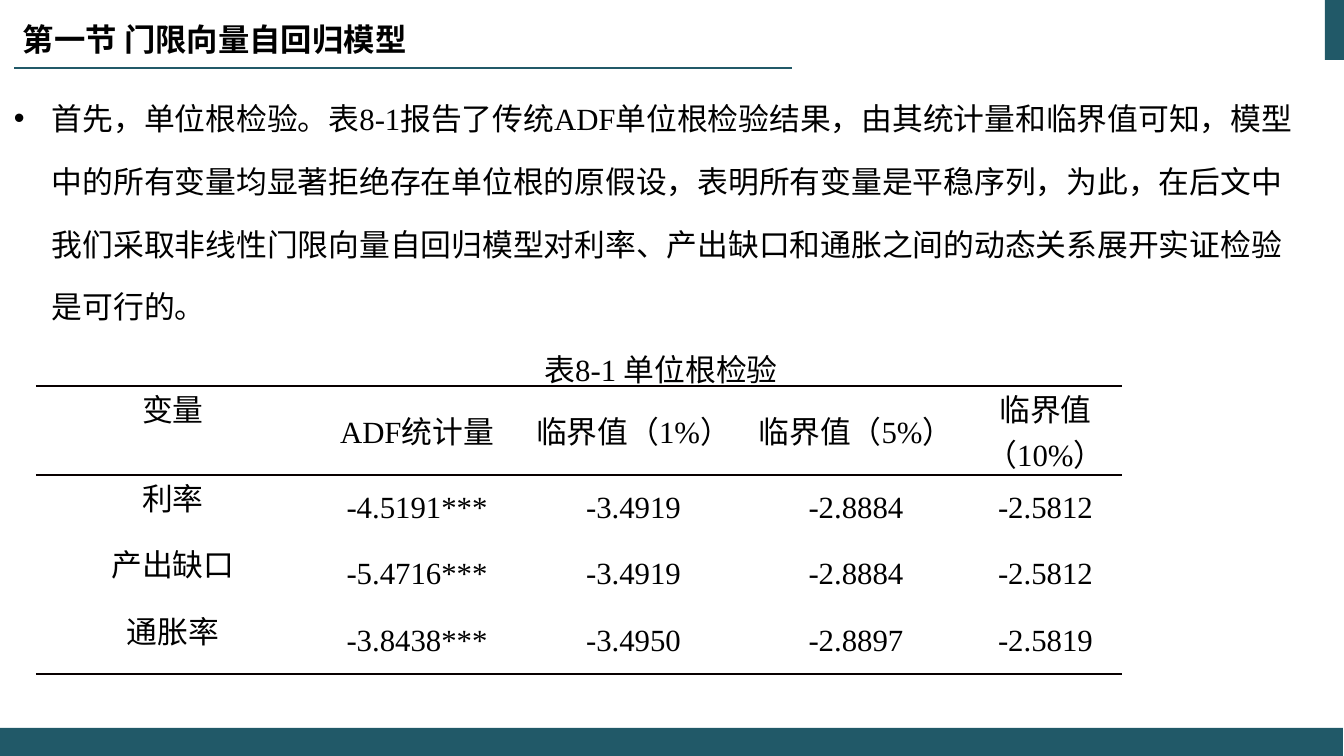
"""Build the slide on the unit root test of the threshold VAR model."""
from lxml.etree import SubElement
from pptx import Presentation
from pptx.dml.color import RGBColor
from pptx.enum.shapes import MSO_CONNECTOR as Link, MSO_SHAPE as Shape
from pptx.enum.text import MSO_ANCHOR as Anchor, PP_ALIGN as Align
from pptx.oxml.ns import qn
from pptx.util import Emu, Pt

TEAL = RGBColor(0x21, 0x59, 0x68)
BLACK = RGBColor(0, 0, 0)
RULE = RGBColor(0x08, 0, 0)
HAN = "Noto Sans CJK SC"
ROMAN = "Times New Roman"


def px(*nums):
    return [Emu(round(n * 914400 / 100.8)) for n in nums]


def style(para, face=ROMAN, size=22, bold=False):
    for run in para.runs:
        font = run.font
        font.size, font.bold = Pt(size), bold
        font.color.rgb = BLACK
        font.name = face
        SubElement(font._element, qn("a:ea"), typeface=HAN)


deck = Presentation()
deck.slide_width, deck.slide_height = px(1344, 756)
slide = deck.slides.add_slide(deck.slide_layouts[6])
shapes = slide.shapes

for box in [(1325, 0, 20, 60), (0, 728, 1343, 28)]:
    bar = shapes.add_shape(Shape.RECTANGLE, *px(*box))
    bar.shadow.inherit = False
    bar.fill.solid()
    bar.fill.fore_color.rgb = TEAL
    bar.line.fill.background()

line = shapes.add_connector(Link.STRAIGHT, *px(792, 68, 14, 68))
line.line.color.rgb = TEAL
line.line.width = Pt(1.5)
SubElement(line._element.spPr, qn("a:effectLst"))

title = shapes.add_textbox(*px(13, -8, 603, 94)).text_frame
title.word_wrap = True
title.vertical_anchor = Anchor.MIDDLE
title.text = "第一节 门限向量自回归模型"
style(title.paragraphs[0], HAN, 22.4, True)

body = shapes.add_textbox(*px(4, 69, 1314, 655)).text_frame
body.word_wrap = True
point = body.paragraphs[0]
point.text = (
    "首先，单位根检验。表8-1报告了传统ADF单位根检验结果，由其统计量和临界值可知，"
    "模型中的所有变量均显著拒绝存在单位根的原假设，表明所有变量是平稳序列，为此，"
    "在后文中我们采取非线性门限向量自回归模型对利率、产出缺口和通胀之间的动态关系"
    "展开实证检验是可行的。"
)
props = point._p.get_or_add_pPr()
indent = px(38)[0]
props.set("marL", str(indent))
props.set("indent", str(-indent))
SubElement(props, qn("a:buFont"), typeface="Arial")
SubElement(props, qn("a:buChar"), char="•")
label = body.add_paragraph()
label.text = "表8-1 单位根检验"
label.alignment = Align.CENTER
for para in body.paragraphs:
    para.line_spacing = 1.7
    style(para)

DATA = [
    ["变量", "ADF统计量", "临界值（1%）", "临界值（5%）", "临界值（10%）"],
    ["利率", "-4.5191***", "-3.4919", "-2.8884", "-2.5812"],
    ["产出缺口", "-5.4716***", "-3.4919", "-2.8884", "-2.5812"],
    ["通胀率", "-3.8438***", "-3.4950", "-2.8897", "-2.5819"],
]
EDGES = [["lnT", "lnB"], ["lnT"], [], ["lnB"]]
WIDTHS = px(274, 214, 219, 226, 153)
HEIGHTS = px(89, 66, 67, 66)

grid = shapes.add_table(4, 5, *px(36, 386, 1086, 288)).table
grid.first_row = grid.horz_banding = False
look = grid._tbl.tblPr.find(qn("a:tableStyleId"))
look.text = "{2D5ABB26-0587-4C30-8999-92F81FD0307C}"
for col, width in zip(grid.columns, WIDTHS):
    col.width = width
for row, height, words, edges in zip(grid.rows, HEIGHTS, DATA, EDGES):
    row.height = height
    for i, (cell, word) in enumerate(zip(row.cells, words)):
        cell.text = word
        cell.margin_left = cell.margin_right = px(7)[0]
        cell.margin_top = cell.margin_bottom = 0
        cell.vertical_anchor = Anchor.MIDDLE if i else Anchor.TOP
        para = cell.text_frame.paragraphs[0]
        para.alignment = Align.CENTER
        style(para)
        for edge in ["lnL", "lnR", "lnT", "lnB"]:
            rim = SubElement(cell._tc.tcPr, qn("a:" + edge), w=str(Pt(1)))
            if edge in edges:
                fill = SubElement(rim, qn("a:solidFill"))
                SubElement(fill, qn("a:srgbClr"), val=str(RULE))
            else:
                SubElement(rim, qn("a:noFill"))
        cell.fill.background()

deck.save("out.pptx")
